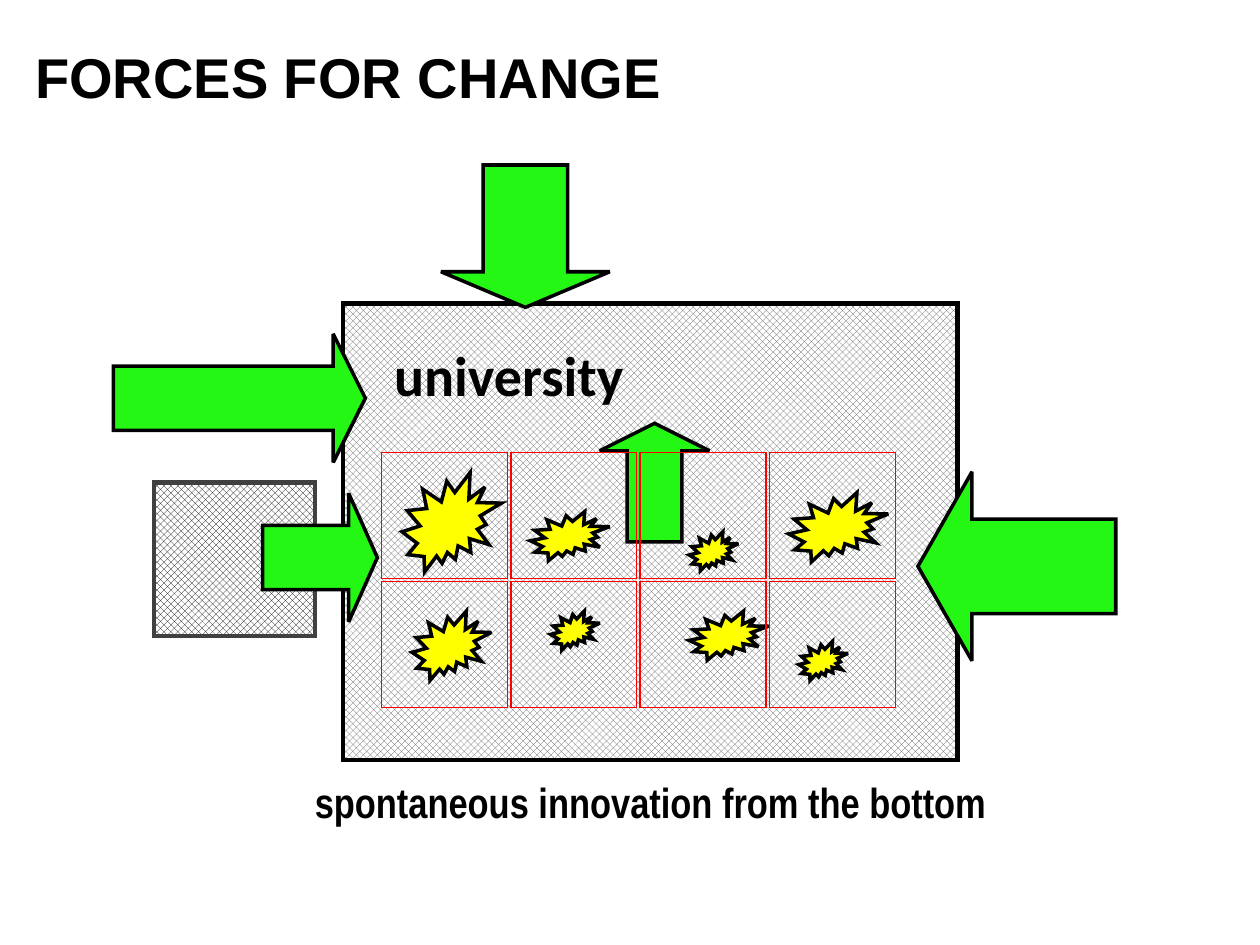
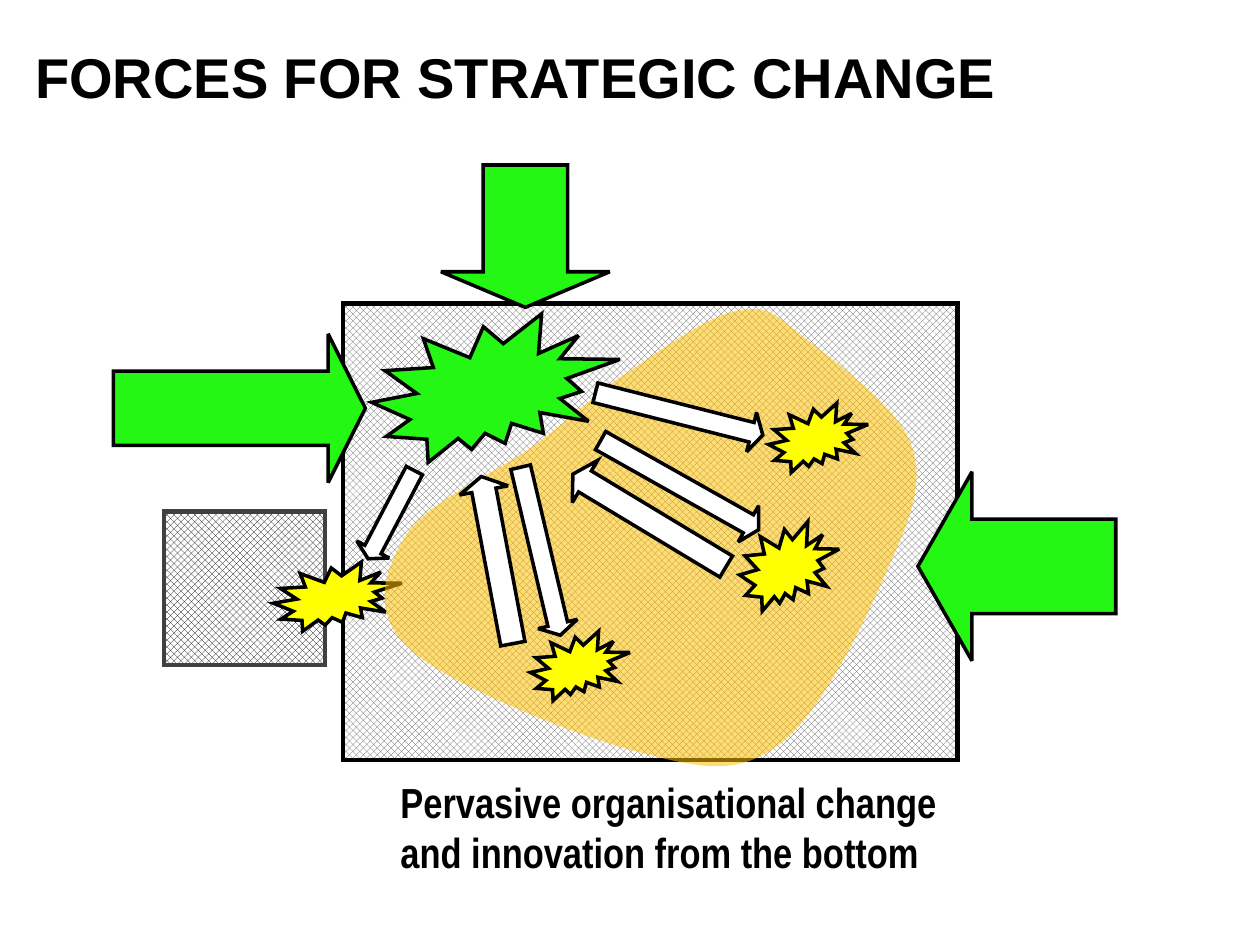
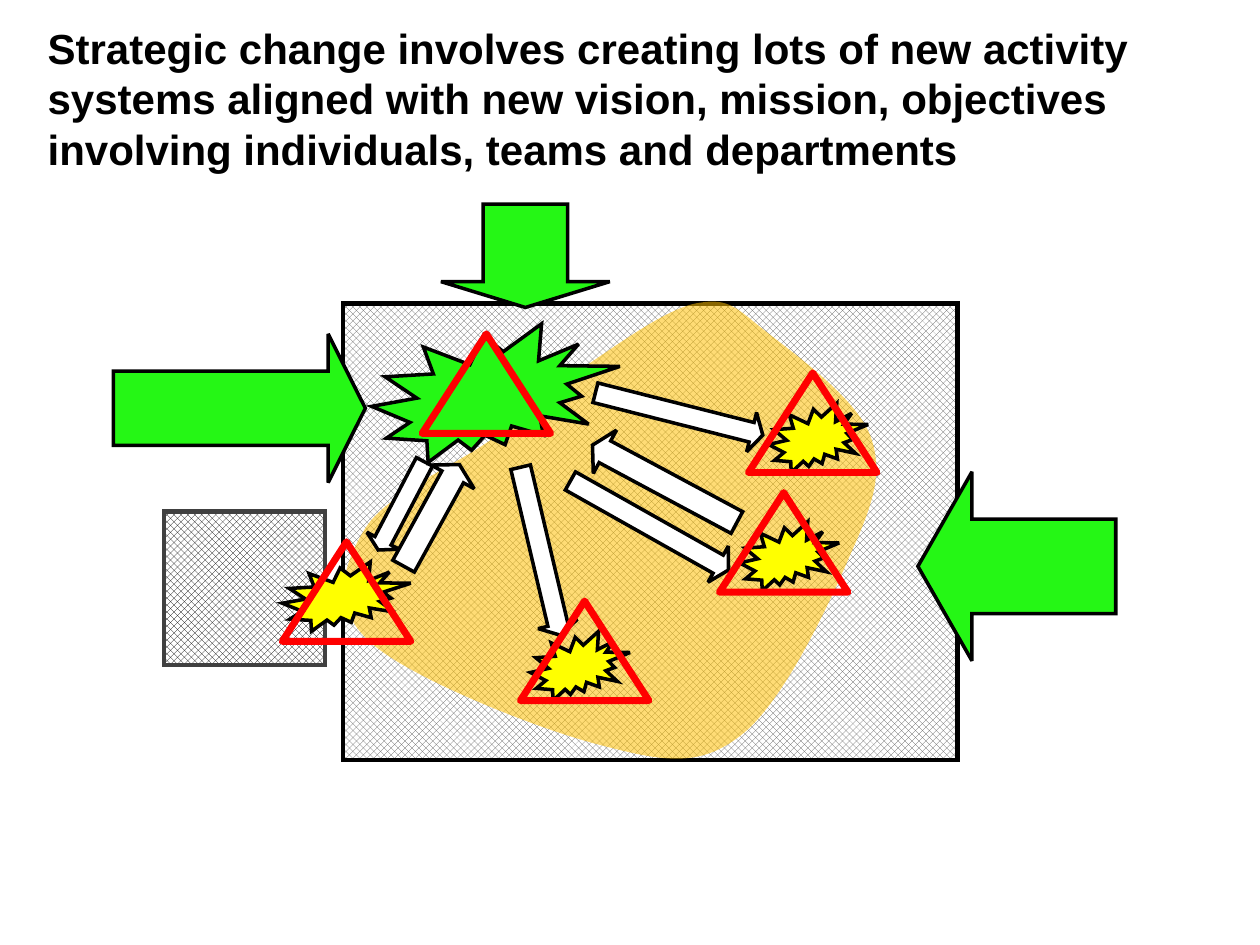
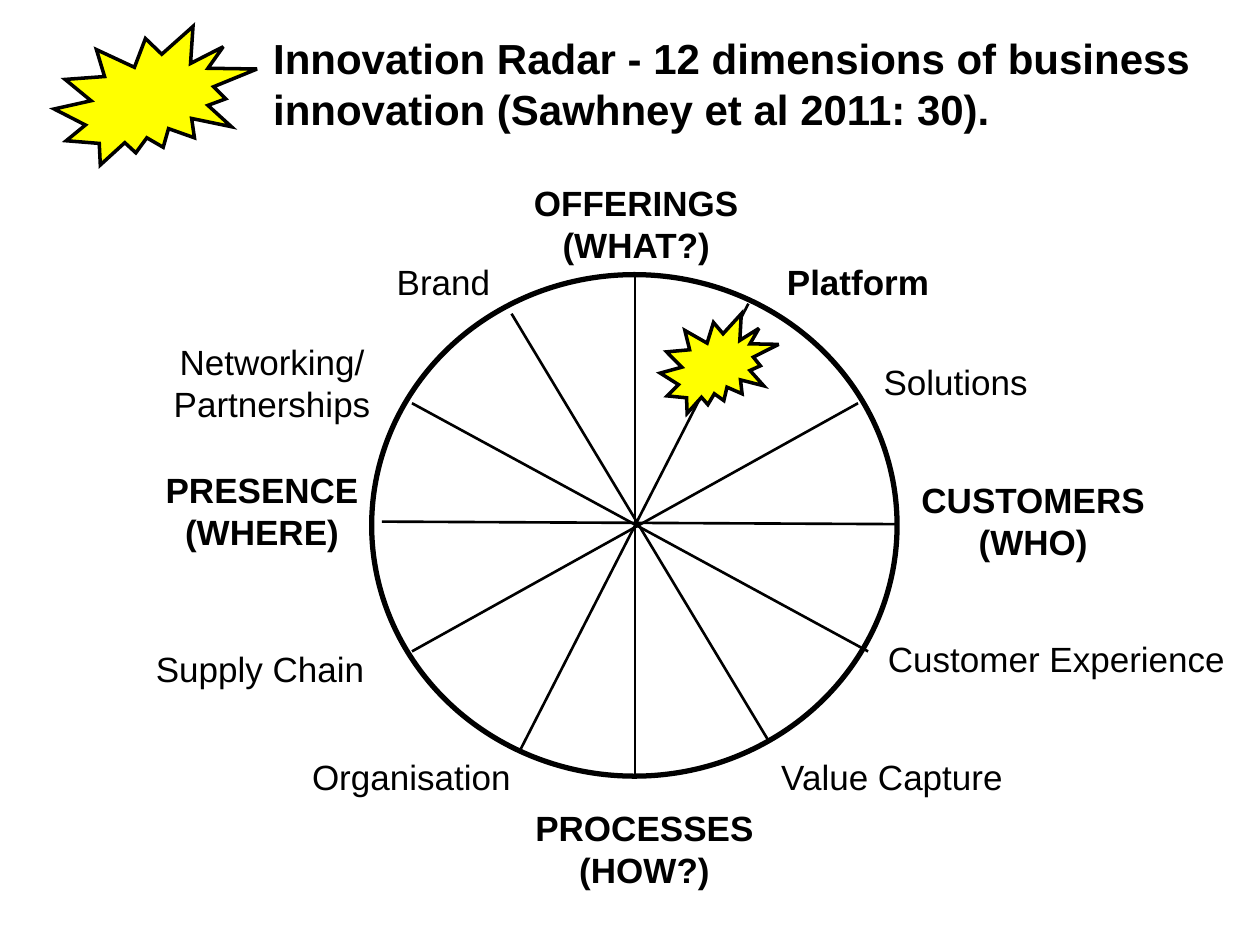
from math import cos, radians, sin

from lxml import etree
from pptx import Presentation
from pptx.dml.color import RGBColor
from pptx.enum.dml import MSO_PATTERN
from pptx.enum.shapes import MSO_CONNECTOR, MSO_SHAPE
from pptx.enum.text import MSO_ANCHOR, MSO_AUTO_SIZE, PP_ALIGN
from pptx.oxml.ns import qn
from pptx.util import Inches, Pt

RECT, OVAL = MSO_SHAPE.RECTANGLE, MSO_SHAPE.OVAL
ARROW, SEAL = MSO_SHAPE.DOWN_ARROW, MSO_SHAPE.EXPLOSION2
TRIANGLE = MSO_SHAPE.ISOSCELES_TRIANGLE
DIAMOND = MSO_PATTERN.OUTLINED_DIAMOND
CHECKER = MSO_PATTERN.LARGE_CHECKER_BOARD
LEFT, CENTER = PP_ALIGN.LEFT, PP_ALIGN.CENTER
TOP, MIDDLE = MSO_ANCHOR.TOP, MSO_ANCHOR.MIDDLE
STRAIGHT = MSO_CONNECTOR.STRAIGHT

COLORS = {
    "black": "000000", "white": "FFFFFF", "grey": "404040", "hatch": "5A5A5A",
    "green": "25F715", "yellow": "FFFF00", "red": "FF0000", "amber": "FFC000",
}
RGB = {name: RGBColor.from_string(value) for name, value in COLORS.items()}


def add_shape(s, kind, box, fill=None, line="black", width=2, rot=0, head=None,
              pattern=None, join="miter"):
    sp = s.shapes.add_shape(kind, *[Inches(v) for v in box])
    sp.shadow.inherit = False
    sp.rotation = rot
    if head:
        sp.adjustments[0], sp.adjustments[1] = 0.5, head
    if pattern:
        sp.fill.patterned()
        sp.fill.pattern = pattern
        sp.fill.fore_color.rgb = RGB[fill]
        sp.fill.back_color.rgb = RGB["white"]
    elif fill:
        sp.fill.solid()
        sp.fill.fore_color.rgb = RGB[fill]
    else:
        sp.fill.background()
    sp.line.color.rgb = RGB[line]
    sp.line.width = Pt(width)
    ln = sp._element.spPr.find(qn("a:ln"))
    corner = etree.SubElement(ln, qn("a:" + join))
    if join == "miter":
        corner.set("lim", "800000")
    return sp


def add_text(s, box, lines, size, bold=True, font="Arial", align=LEFT,
             wrap=True, hanging=False, anchor=TOP):
    tf = s.shapes.add_textbox(*[Inches(v) for v in box]).text_frame
    tf.word_wrap = wrap
    tf.auto_size = MSO_AUTO_SIZE.SHAPE_TO_FIT_TEXT
    tf.vertical_anchor = anchor
    for i, line in enumerate(lines):
        p = tf.add_paragraph() if i else tf.paragraphs[0]
        p.alignment = align
        if hanging:
            pPr = p._p.get_or_add_pPr()
            pPr.set("marL", str(Inches(0.38)))
            pPr.set("indent", str(-Inches(0.38)))
        r = p.add_run()
        r.text = line
        r.font.name, r.font.size, r.font.bold = font, Pt(size), bold
        r.font.color.rgb = RGB["black"]


prs = Presentation()
prs.slide_width, prs.slide_height = Inches(10), Inches(7.5)
forces, strategic, systems, radar = [
    prs.slides.add_slide(prs.slide_layouts[6]) for _ in range(4)]

# Organisation, its annex and the outside pressures on slides 1 to 3
for s, annex, top_arrow, left_arrow in [
    (forces, (1.22, 3.83), (1.31, 1.13), (1.39, 2.16, 1.02, 2)),
    (strategic, (1.3, 4.06), (1.31, 1.13), (1.31, 2.24, 1.18, 2)),
    (systems, (1.3, 4.06), (1.62, 0.82), (1.31, 2.24, 1.18, 2)),
]:
    add_shape(s, RECT, (2.72, 2.41, 4.88, 3.62), "hatch", width=2.5, pattern=DIAMOND)
    add_shape(s, ARROW, (7.32, 3.71, 1.5, 1.57), "green", rot=90, head=0.286)
    add_shape(s, RECT, (*annex, 1.28, 1.22), "black", "grey", 2.5, pattern=CHECKER)
    y, h = top_arrow
    add_shape(s, ARROW, (3.5, y, 1.34, h), "green", head=0.25)
    add_shape(s, ARROW, left_arrow, "green", rot=270, head=0.25)

# Slide 1: local innovation inside a grid of units
s = forces
add_text(s, (0.18, 0.29, 5.21, 0.64), ["FORCES FOR CHANGE"], 32, wrap=False, hanging=True)
add_shape(s, ARROW, (4.76, 3.36, 0.87, 0.94), "green", rot=180, head=0.25)
add_shape(s, ARROW, (2.03, 3.97, 1.02, 0.91), "green", rot=270, head=0.25)
for box in [
    (6.34, 5.09, 0.39, 0.31), (4.21, 4.06, 0.63, 0.39), (3.19, 3.75, 0.79, 0.79),
    (3.27, 4.85, 0.63, 0.55), (6.26, 3.91, 0.79, 0.55), (5.47, 4.85, 0.63, 0.39),
    (4.37, 4.85, 0.39, 0.31), (5.47, 4.22, 0.39, 0.31),
]:
    add_shape(s, SEAL, box, "yellow")
for row in range(2):
    for col in range(4):
        add_shape(s, RECT, (3.03 + 1.025 * col, 3.59 + 1.025 * row, 1, 1),
                  line="red", width=0.75)
add_text(s, (3.03, 2.65, 2.04, 0.64), ["university"], 32, font="Calibri", wrap=False)
add_text(s, (2.4, 6.11, 5.58, 0.5), ["spontaneous innovation from the bottom"], 24,
         font="Arial Narrow", wrap=False, hanging=True)

# Slide 2: texts and the seal behind the amber area
s = strategic
add_text(s, (0.18, 0.29, 7.9, 0.64), ["FORCES FOR STRATEGIC CHANGE"], 32,
         wrap=False, hanging=True)
add_text(s, (3.08, 6.11, 4.66, 0.91),
         ["Pervasive organisational change", "and innovation from the bottom"], 24,
         font="Arial Narrow", wrap=False, hanging=True)
add_shape(s, SEAL, (2.17, 4.46, 1.02, 0.55), "yellow")

# Slides 2 and 3: amber area of change, seals, white arrows and green hub
AREA = [
    (7.23, 3.53),
    (7.12, 3.23), (6.63, 2.88), (6.4, 2.7),
    (6.17, 2.52), (6.11, 2.43), (5.87, 2.47),
    (5.64, 2.5), (5.28, 2.76), (5.01, 2.94),
    (4.74, 3.11), (4.55, 3.31), (4.25, 3.53),
    (3.95, 3.75), (3.39, 3.98), (3.22, 4.25),
    (3.05, 4.52), (2.93, 4.86), (3.25, 5.15),
    (3.56, 5.44), (4.62, 5.86), (5.11, 5.98),
    (5.6, 6.11), (5.88, 6.15), (6.2, 5.9),
    (6.53, 5.65), (6.89, 4.89), (7.06, 4.49),
    (7.24, 4.09), (7.34, 3.83), (7.23, 3.53),
]
TILT = 20
c, d = cos(radians(TILT)), sin(radians(TILT))
# Turn the outline upright, as the shape itself carries the tilt
upright = [(Inches(x * c + y * d), Inches(y * c - x * d)) for x, y in AREA]
SHARED_ARROWS = [(5.23, 2.6, 0.32, 1.37, 284.2), (4.13, 3.69, 0.32, 1.37, 346.7)]

for s, area_at, seal_h, hub, arrows in [
    (strategic, (3.33, 2.22), 0.71, (2.95, 2.49, 1.97, 1.18), [
        (5.23, 3.13, 0.33, 1.44, 299.4), (3.75, 3.77, 0.39, 1.35, 169.3),
        (2.96, 3.69, 0.29, 0.79, 27.7), (4.96, 3.42, 0.39, 1.42, 121.1)]),
    (systems, (3.01, 2.16), 0.55, (2.95, 2.57, 1.97, 1.1), [
        (5.08, 3.19, 0.39, 1.3, 118.2), (4.99, 3.45, 0.33, 1.44, 299.4),
        (3.23, 3.63, 0.39, 0.92, 208.8), (3.04, 3.62, 0.29, 0.79, 27.7)]),
]:
    fb = s.shapes.build_freeform(*upright[0])
    fb.add_line_segments(upright[1:], close=True)
    sp = fb.convert_to_shape()
    sp.left, sp.top = [Inches(v) for v in area_at]
    sp.width, sp.height = Inches(3.79), Inches(3.74)
    sp.rotation = TILT
    sp.shadow.inherit = False
    sp.line.fill.background()
    sp.fill.solid()
    sp.fill.fore_color.rgb = RGB["amber"]
    tint = sp._element.spPr.find(qn("a:solidFill"))[0]
    etree.SubElement(tint, qn("a:alpha")).set("val", "54000")
    # Each three straight segments become one Bezier curve
    segments = list(sp._element.iter(qn("a:lnTo")))
    for i in range(0, len(segments), 3):
        curve = etree.Element(qn("a:cubicBezTo"))
        segments[i].addprevious(curve)
        for seg in segments[i:i + 3]:
            curve.append(seg[0])
            seg.getparent().remove(seg)

    for x, y, h in [(4.21, 5.01, 0.55), (5.87, 4.14, seal_h), (6.1, 3.2, 0.55)]:
        add_shape(s, SEAL, (x, y, 0.79, h), "yellow")
    for *box, rot in SHARED_ARROWS + arrows:
        add_shape(s, ARROW, box, "white", rot=rot, head=0.286)
    add_shape(s, SEAL, hub, "green")

# Slide 3: heading and activity systems
s = systems
add_text(s, (0.28, 0.13, 9.53, 1.31), [
    "Strategic change involves creating lots of new activity",
    "systems aligned with new vision, mission, objectives",
    "involving individuals, teams and departments"], 24, hanging=True)
add_shape(s, SEAL, (2.24, 4.46, 1.02, 0.55), "yellow")
for x, y in [(5.71, 3.91), (4.13, 4.77), (5.94, 2.96), (3.35, 2.65), (2.24, 4.3)]:
    add_shape(s, TRIANGLE, (x, y, 1.02, 0.79), line="red", width=4, join="round")

# Slide 4: radar circle with its spokes
s = radar
add_shape(s, SEAL, (0.43, 0.21, 1.61, 1.1), "yellow")
add_text(s, (2.07, 0.21, 7.93, 0.91), [
    "Innovation Radar - 12 dimensions of business innovation "
    "(Sawhney et al 2011: 30)."], 24)
add_shape(s, OVAL, (2.95, 2.18, 4.17, 3.98), width=3)
for ends in [
    (5.04, 2.18, 5.04, 6.15), (3.03, 4.14, 7.13, 4.16), (4.06, 2.49, 6.1, 5.88),
    (5.94, 2.41, 4.13, 5.95), (3.27, 3.2, 6.89, 5.17), (6.81, 3.2, 3.27, 5.17),
]:
    spoke = s.shapes.add_connector(STRAIGHT, *[Inches(v) for v in ends])
    spoke.line.color.rgb = RGB["black"]
    spoke.line.width = Pt(1.5)
    etree.SubElement(spoke._element.spPr, qn("a:effectLst"))

# Radar labels: the four main dimensions are bold, and so is Platform
add_text(s, (4.13, 1.39, 1.84, 0.77), ["OFFERINGS", "(WHAT?)"], 20, align=CENTER,
         wrap=False, anchor=MIDDLE)
for box, lines, bold in [
    ((5.79, 2.02, 2.04, 0.44), ["Platform"], True),
    ((6.89, 2.81, 1.39, 0.44), ["Solutions"], False),
    ((7.13, 3.75, 2.14, 0.77), ["CUSTOMERS", "(WHO)"], True),
    ((6.77, 5.01, 3.23, 0.44), ["Customer Experience"], False),
    ((6.1, 5.95, 1.96, 0.44), ["Value Capture"], False),
    ((4.13, 6.35, 1.97, 0.77), ["PROCESSES", "(HOW?)"], True),
    ((2.32, 5.95, 1.89, 0.44), ["Organisation"], False),
    ((0.98, 5.09, 2.17, 0.44), ["Supply Chain"], False),
    ((1.06, 3.67, 2.04, 0.77), ["PRESENCE", "(WHERE)"], True),
    ((0.98, 2.65, 2.36, 0.77), ["Networking/", "Partnerships"], False),
    ((3.03, 2.02, 0.98, 0.44), ["Brand"], False),
]:
    add_text(s, box, lines, 20, bold, align=CENTER)
add_shape(s, SEAL, (5.24, 2.49, 0.94, 0.79), "yellow")

prs.save("out.pptx")
